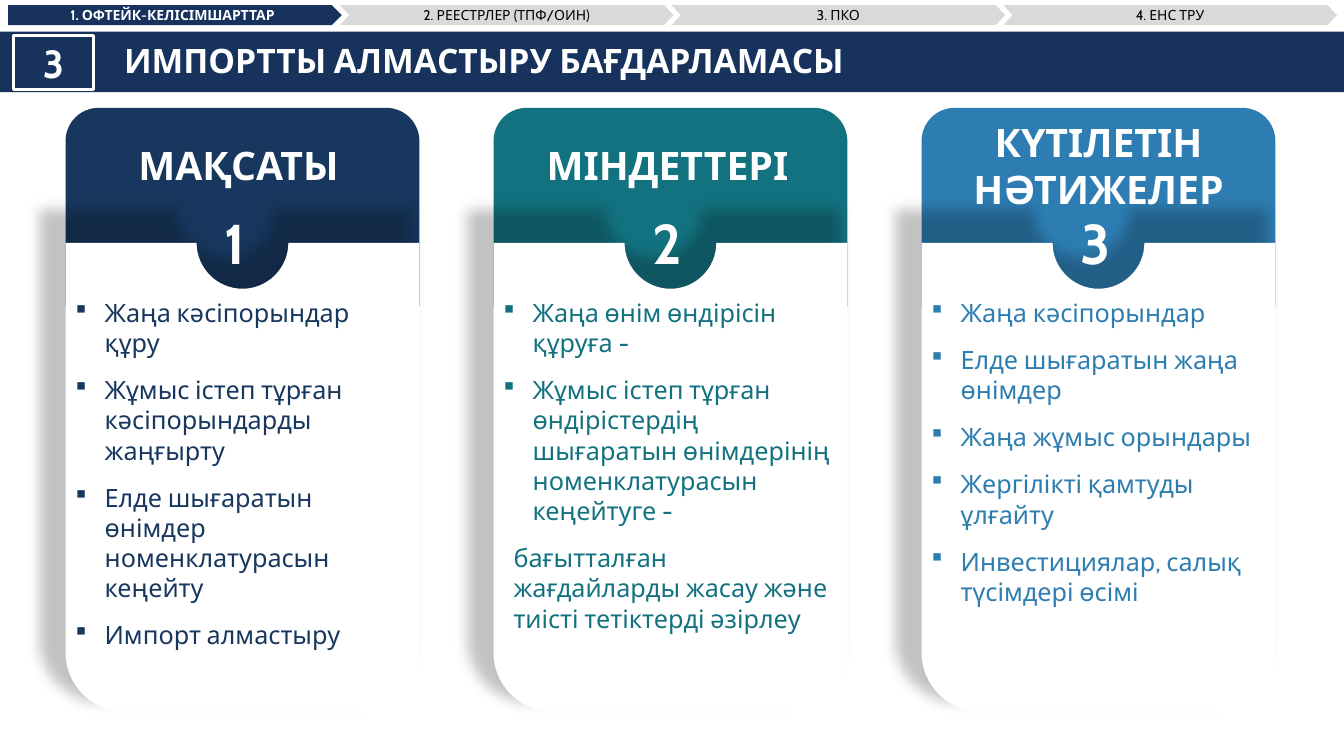
import itertools
from dataclasses import dataclass

import pptx
import pptx.util
from lxml import etree
from pptx.dml.color import RGBColor
from pptx.enum.shapes import MSO_SHAPE
from pptx.enum.text import MSO_ANCHOR, MSO_AUTO_SIZE, PP_ALIGN
from pptx.oxml.ns import qn

TITLE = "ИМПОРТТЫ АЛМАСТЫРУ БАҒДАРЛАМАСЫ"
SECTION = "3"
STEPS = [
    "1. ОФТЕЙК-КЕЛІСІМШАРТТАР",
    "2. РЕЕСТРЛЕР (ТПФ/ОИН)",
    "3. ПКО",
    "4. ЕНС ТРУ",
]
CARDS = [
    {"heading": "МАҚСАТЫ", "shift": -0.04, "fill": "17375E", "ink": "17375E", "closing": [],
     "bullets": ["Жаңа кәсіпорындар құру",
                 "Жұмыс істеп тұрған кәсіпорындарды жаңғырту",
                 "Елде шығаратын өнімдер номенклатурасын кеңейту",
                 "Импорт алмастыру"]},
    {"heading": "МІНДЕТТЕРІ", "shift": -0.03, "fill": "137280", "ink": "137280",
     "closing": ["бағытталған жағдайларды жасау және тиісті тетіктерді әзірлеу"],
     "bullets": ["Жаңа өнім өндірісін құруға -",
                 "Жұмыс істеп тұрған өндірістердің шығаратын өнімдерінің "
                 "номенклатурасын кеңейтуге -"]},
    {"heading": "КҮТІЛЕТІН НӘТИЖЕЛЕР", "shift": 0, "fill": "2D7DB2", "ink": "2D7DB1",
     "closing": [],
     "bullets": ["Жаңа кәсіпорындар",
                 "Елде шығаратын жаңа өнімдер",
                 "Жаңа жұмыс орындары",
                 "Жергілікті қамтуды ұлғайту",
                 "Инвестициялар, салық түсімдері өсімі"]},
]


@dataclass(frozen=True)
class Theme:
    font: str = "Cabin"
    navy: str = "17335D"
    grey: str = "D9D9D9"
    white: str = "FFFFFF"
    black: str = "000000"
    step: int = 10
    body: int = 18
    title: int = 24
    heading: int = 28
    number: int = 40


THEME = Theme()
WIDTH, HEIGHT = 13.33, 7.5
CARD_LEFT, CARD_PITCH, CARD_WIDTH = 0.65, 4.245, 3.51
PANEL_TOP, PANEL_BOTTOM, NOTCH, CORNER = 2.41, 7.06, 0.455, 0.585
STEP_LEFT, STEP_PITCH, STEP_WIDTH = 0.08, 3.29, 3.31
ROUNDING = 0.55

inches = pptx.util.Inches


def write(shape, lines, size, color, bold=False, align=PP_ALIGN.CENTER,
          anchor=MSO_ANCHOR.MIDDLE):
    frame = shape.text_frame
    frame.word_wrap = True
    frame.auto_size = MSO_AUTO_SIZE.NONE
    frame.vertical_anchor = anchor
    frame.text = "\n".join(lines)
    for para in frame.paragraphs:
        para.alignment = align
        for span in para.runs:
            span.font.name = THEME.font
            span.font.size = pptx.util.Pt(size)
            span.font.bold = bold
            span.font.color.rgb = RGBColor.from_string(color)
    return frame


def paint(shape, fill):
    shape.shadow.inherit = False
    shape.fill.solid()
    shape.fill.fore_color.rgb = RGBColor.from_string(fill)
    shape.line.fill.background()


def add_block(page, kind, area, fill):
    shape = page.shapes.add_shape(kind, *map(inches, area))
    paint(shape, fill)
    return shape


def add_text(page, area, *args, **kwargs):
    return write(page.shapes.add_textbox(*map(inches, area)), *args, **kwargs)


def add_shadow(shape):
    effects = shape.element.spPr.find(qn("a:effectLst"))
    shadow = etree.SubElement(effects, qn("a:outerShdw"), {
        "blurRad": str(pptx.util.Pt(10)), "dist": str(pptx.util.Pt(20)),
        "dir": str(231 * 60000), "sx": "105000", "sy": "105000",
        "algn": "ctr", "rotWithShape": "0"})
    color = etree.SubElement(shadow, qn("a:srgbClr"), val=THEME.black)
    etree.SubElement(color, qn("a:alpha"), val="23000")


def curve(start, corner, end):
    return [tuple(a + (b - a) * ROUNDING for a, b in zip(point, corner))
            for point in (start, end)] + [end]


def panel_segments(left):
    right, middle = left + CARD_WIDTH, left + CARD_WIDTH / 2
    top, bottom, low = PANEL_TOP, PANEL_BOTTOM, PANEL_BOTTOM - CORNER
    dip = top + NOTCH
    return [
        [(middle - NOTCH, top)],
        curve((middle - NOTCH, top), (middle - NOTCH, dip), (middle, dip)),
        curve((middle, dip), (middle + NOTCH, dip), (middle + NOTCH, top)),
        [(right, top)],
        [(right, low)],
        curve((right, low), (right, bottom), (right - CORNER, bottom)),
        [(left + CORNER, bottom)],
        curve((left + CORNER, bottom), (left, bottom), (left, low)),
    ]


def add_panel(page, left):
    segments = panel_segments(left)
    points = [(inches(x), inches(y)) for x, y in itertools.chain(*segments)]
    builder = page.shapes.build_freeform(inches(left), inches(PANEL_TOP))
    builder.add_line_segments(points, close=True)
    panel = builder.convert_to_shape()
    outline = next(panel.element.iter(qn("a:path")))
    lines = iter(outline.findall(qn("a:lnTo")))
    for segment in segments:
        first, *rest = itertools.islice(lines, len(segment))
        if rest:
            first.tag = qn("a:cubicBezTo")
        for line in rest:
            first.append(line[0])
            outline.remove(line)
    paint(panel, THEME.white)
    add_shadow(panel)


def format_list(frame, bullet_count):
    for index, para in enumerate(frame.paragraphs):
        para.space_after = pptx.util.Pt(12)
        props = para._p.get_or_add_pPr()
        if index < bullet_count:
            props.set("marL", str(inches(0.29)))
            props.set("indent", str(inches(-0.29)))
            etree.SubElement(props, qn("a:buFont"), typeface="Wingdings", charset="2")
            etree.SubElement(props, qn("a:buChar"), char="§")
        else:
            props.set("marL", str(inches(0.1)))


def add_card(page, index, card):
    left = CARD_LEFT + index * CARD_PITCH
    add_block(page, MSO_SHAPE.ROUND_2_SAME_RECTANGLE,
              (left, 1.07, CARD_WIDTH, 1.97), card["fill"])
    add_panel(page, left)
    add_text(page, (left + 1.475, 2.02, 0.56, 0.77), [str(index + 1)],
             THEME.number, THEME.white, bold=True, align=PP_ALIGN.LEFT)
    add_text(page, (left + card["shift"], 1.12, CARD_WIDTH, 1.04), [card["heading"]],
             THEME.heading, THEME.white, bold=True)
    frame = add_text(page, (left, 2.9, CARD_WIDTH, 3.5), card["bullets"] + card["closing"],
                     THEME.body, card["ink"], align=PP_ALIGN.LEFT, anchor=MSO_ANCHOR.TOP)
    format_list(frame, len(card["bullets"]))


def add_header(page):
    add_block(page, MSO_SHAPE.RECTANGLE, (0, 0.315, WIDTH, 0.6), THEME.navy)
    badge = add_block(page, MSO_SHAPE.RECTANGLE, (0.135, 0.355, 0.79, 0.53), THEME.navy)
    badge.line.color.rgb = RGBColor.from_string(THEME.white)
    badge.line.width = pptx.util.Pt(2.25)
    write(badge, [SECTION], THEME.heading, THEME.white, bold=True)
    title = page.shapes.title
    page.shapes.element.append(title.element)
    title.left, title.top, title.width, title.height = map(inches, (1.13, 0.35, 12.2, 0.5))
    write(title, [TITLE], THEME.title, THEME.white, bold=True, align=PP_ALIGN.LEFT)


def add_step(page, index, label):
    active = index == 0
    kind = MSO_SHAPE.PENTAGON if active else MSO_SHAPE.CHEVRON
    step = add_block(page, kind, (STEP_LEFT + index * STEP_PITCH, 0.05, STEP_WIDTH, 0.2),
                     THEME.navy if active else THEME.grey)
    step.adjustments[0] = 0.5 if active else 0.467
    write(step, [label], THEME.step, THEME.white if active else THEME.black, bold=active)


def main():
    deck = pptx.Presentation()
    deck.slide_width, deck.slide_height = inches(WIDTH), inches(HEIGHT)
    page = deck.slides.add_slide(deck.slide_layouts.get_by_name("Title Only"))
    add_header(page)
    for index, card in enumerate(CARDS):
        add_card(page, index, card)
    for index, label in enumerate(STEPS):
        add_step(page, index, label)
    deck.save("out.pptx")


if __name__ == "__main__":
    main()
